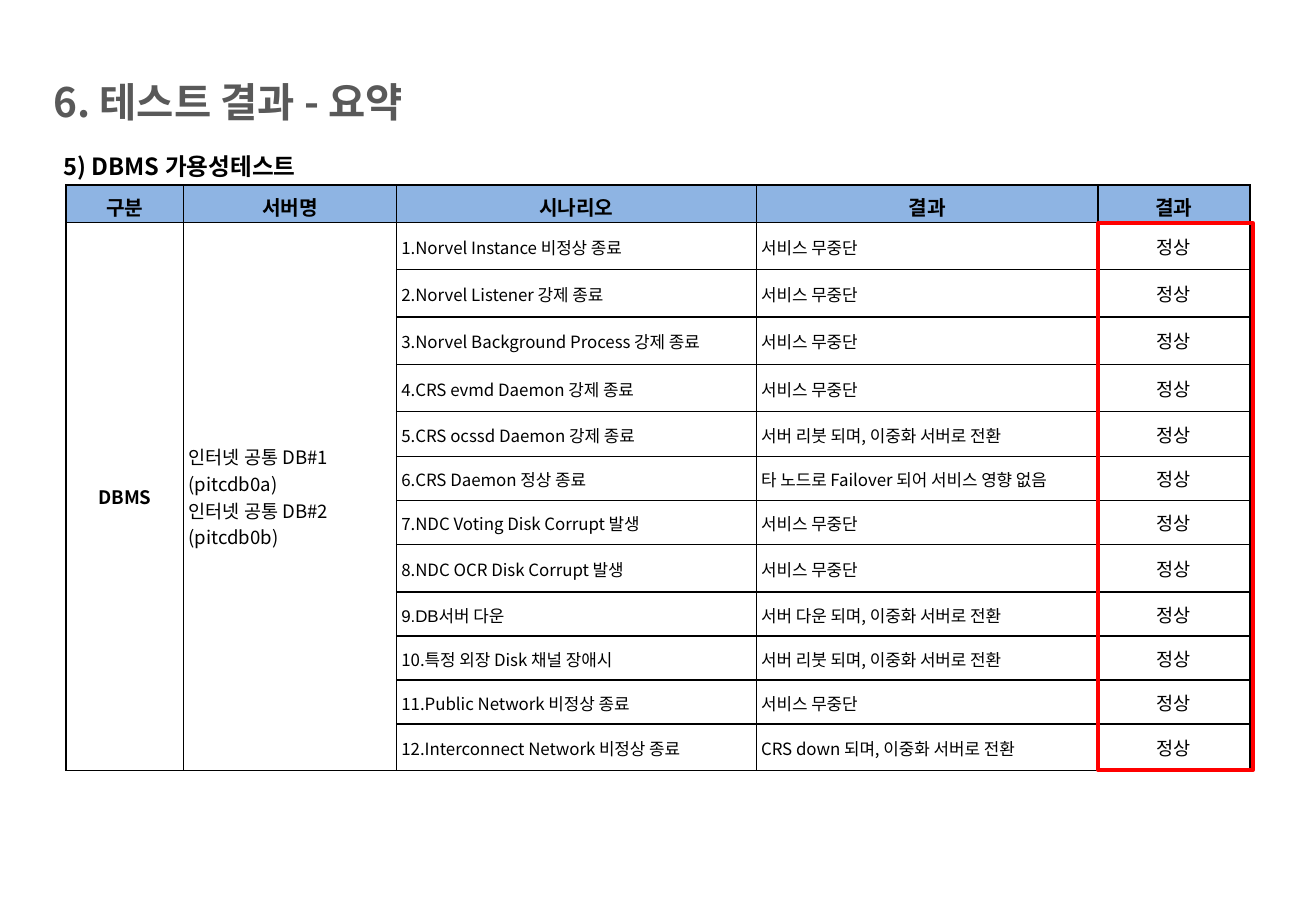
from lxml.etree import SubElement
from pptx import Presentation
from pptx.dml.color import RGBColor
from pptx.enum.shapes import MSO_SHAPE
from pptx.enum.text import MSO_ANCHOR, MSO_AUTO_SIZE, PP_ALIGN
from pptx.oxml.ns import qn
from pptx.util import Cm, Pt

COLORS = {"text": "000000", "title": "595959", "header": "8EB4E3",
          "cell": "FFFFFF", "border": "000000", "mark": "FF0000"}
FONT = "Noto Sans CJK KR"


def write(tf, text, size=10, bold=False, color="text", align=PP_ALIGN.LEFT, latin=FONT):
    """Fill a text frame, one paragraph per line of text."""
    for i, line in enumerate(text.split("\n")):
        p = tf.add_paragraph() if i else tf.paragraphs[0]
        p.alignment = align
        p.space_before = Pt(0)
        r = p.add_run()
        r.text = line
        r.font.size, r.font.bold, r.font.name = Pt(size), bold, latin
        r.font.color.rgb = RGBColor.from_string(COLORS[color])
        SubElement(r._r.get_or_add_rPr(), qn("a:ea"), typeface=FONT)


def format_cell(cell, fill, margins):
    """Set borders, fill and margins (left, top, right, bottom in cm)."""
    tcPr = cell._tc.get_or_add_tcPr()
    for side in ("lnL", "lnR", "lnT", "lnB"):
        ln = SubElement(tcPr, qn(f"a:{side}"), w=str(Pt(1)))
        SubElement(SubElement(ln, qn("a:solidFill")), qn("a:srgbClr"), val=COLORS["border"])
    cell.fill.solid()
    cell.fill.fore_color.rgb = RGBColor.from_string(COLORS[fill])
    cell.vertical_anchor = MSO_ANCHOR.MIDDLE
    (cell.margin_left, cell.margin_top,
     cell.margin_right, cell.margin_bottom) = [Cm(m) for m in margins]


prs = Presentation()
prs.slide_width, prs.slide_height = Cm(27.51), Cm(19.05)
s = prs.slides.add_slide(prs.slide_layouts[1])

# Title and section heading
headings = [
    (s.shapes.title, (0.86, 1.38, 20.47, 1.47), "6. 테스트 결과 - 요약", 24, "title"),
    (s.placeholders[1], (1.07, 2.95, 25.07, 1.04), "5) DBMS 가용성테스트", 14, "text"),
]
for sp, box, text, size, color in headings:
    sp.left, sp.top, sp.width, sp.height = [Cm(v) for v in box]
    tf = sp.text_frame
    tf.auto_size = MSO_AUTO_SIZE.NONE
    tf.vertical_anchor = MSO_ANCHOR.MIDDLE
    pPr = tf.paragraphs[0]._p.get_or_add_pPr()
    pPr.set("marL", "0")
    pPr.set("indent", "0")
    SubElement(pPr, qn("a:buNone"))
    write(tf, text, size=size, bold=True, color=color)

# Table content
headers = ["구분", "서버명", "시나리오", "결과", "결과"]
servers = "인터넷 공통 DB#1\n(pitcdb0a)\n인터넷 공통 DB#2\n(pitcdb0b)"
no_outage = "서비스 무중단"
reboot = "서버 리붓 되며, 이중화 서버로 전환"
scenarios = [
    ("1.Norvel Instance 비정상 종료", no_outage),
    ("2.Norvel Listener 강제 종료", no_outage),
    ("3.Norvel Background Process 강제 종료", no_outage),
    ("4.CRS evmd Daemon 강제 종료", no_outage),
    ("5.CRS ocssd Daemon 강제 종료", reboot),
    ("6.CRS Daemon 정상 종료", "타 노드로 Failover 되어 서비스 영향 없음"),
    ("7.NDC Voting Disk Corrupt 발생", no_outage),
    ("8.NDC OCR Disk Corrupt 발생", no_outage),
    ("9.DB서버 다운", "서버 다운 되며, 이중화 서버로 전환"),
    ("10.특정 외장 Disk 채널 장애시", reboot),
    ("11.Public Network 비정상 종료", no_outage),
    ("12.Interconnect Network 비정상 종료", "CRS down 되며, 이중화 서버로 전환"),
]
col_widths = [2.46, 4.45, 7.52, 7.14, 3.18]
row_heights = [0.78] + [0.99] * 4 + [0.94, 0.92, 0.92, 0.99, 0.92, 0.92, 0.92, 0.97]

# Table grid
table = s.shapes.add_table(len(row_heights), len(col_widths), Cm(1.38), Cm(3.87),
                           Cm(sum(col_widths)), Cm(sum(row_heights))).table
table.horz_banding = False
for col, width in zip(table.columns, col_widths):
    col.width = Cm(width)
for row, height in zip(table.rows, row_heights):
    row.height = Cm(height)

# Header row
for c, text in enumerate(headers):
    cell = table.cell(0, c)
    format_cell(cell, "header", (0.25, 0.13, 0.25, 0))
    write(cell.text_frame, text, size=12, bold=True, align=PP_ALIGN.CENTER)

# Body cells
for r in range(1, len(row_heights)):
    for c in range(len(col_widths)):
        margins = (0.1, 0.03, 0.03, 0) if c in (2, 3) else (0.1, 0.1, 0.1, 0.1)
        format_cell(table.cell(r, c), "cell", margins)
for c in (0, 1):
    table.cell(1, c).merge(table.cell(len(scenarios), c))
write(table.cell(1, 0).text_frame, "DBMS", size=11, bold=True, align=PP_ALIGN.CENTER)
write(table.cell(1, 1).text_frame, servers, size=11)
for r, (scenario, result) in enumerate(scenarios, start=1):
    write(table.cell(r, 2).text_frame, scenario, latin="Arial" if r == 9 else FONT)
    write(table.cell(r, 3).text_frame, result)
    write(table.cell(r, 4).text_frame, "정상", size=11, align=PP_ALIGN.CENTER)

# Red frame around the verdict column
frame = s.shapes.add_shape(MSO_SHAPE.RECTANGLE, Cm(22.96), Cm(4.67), Cm(3.23), Cm(11.43))
frame.shadow.inherit = False
frame.fill.background()
frame.line.color.rgb = RGBColor.from_string(COLORS["mark"])
frame.line.width = Pt(2.5)

prs.save("out.pptx")
